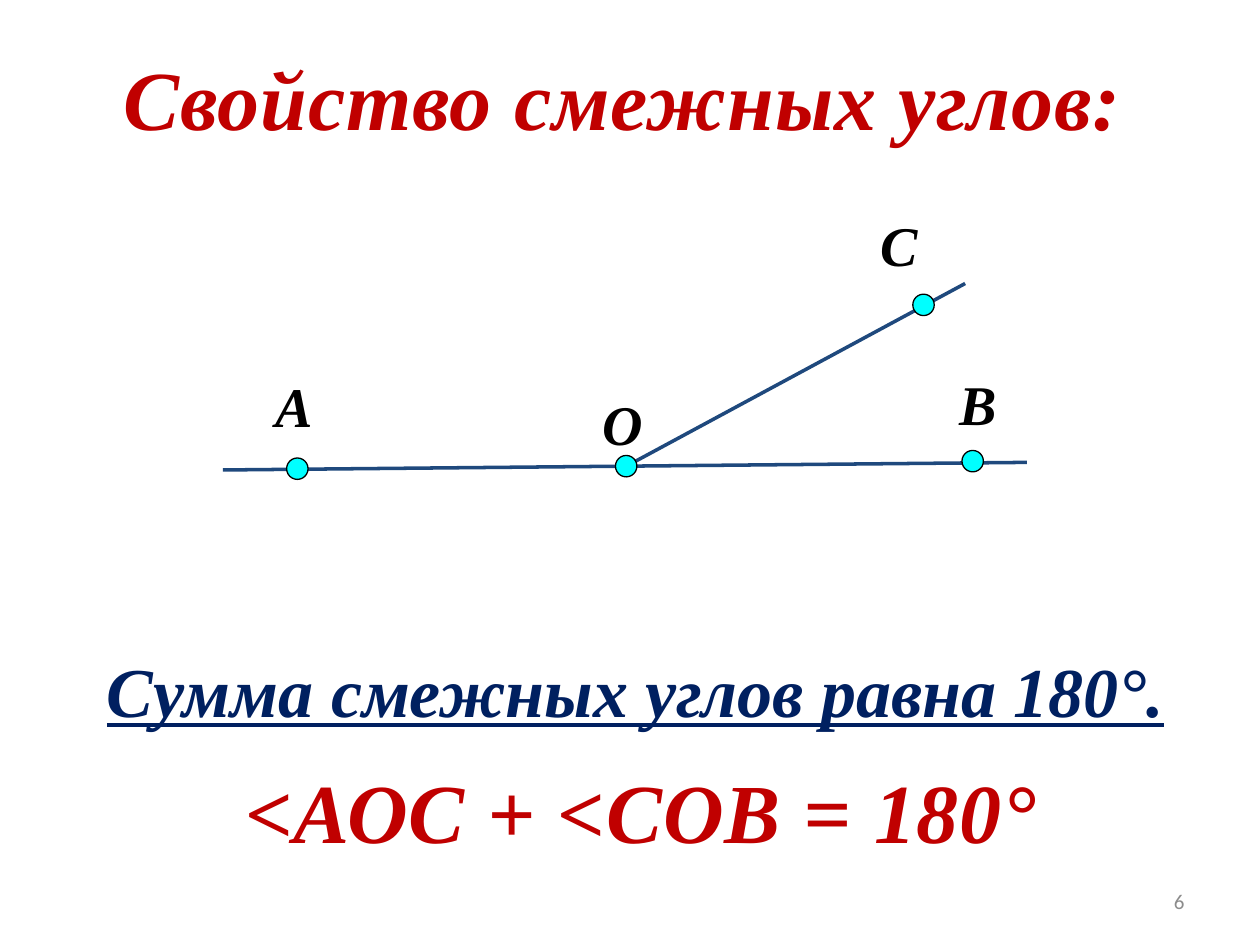
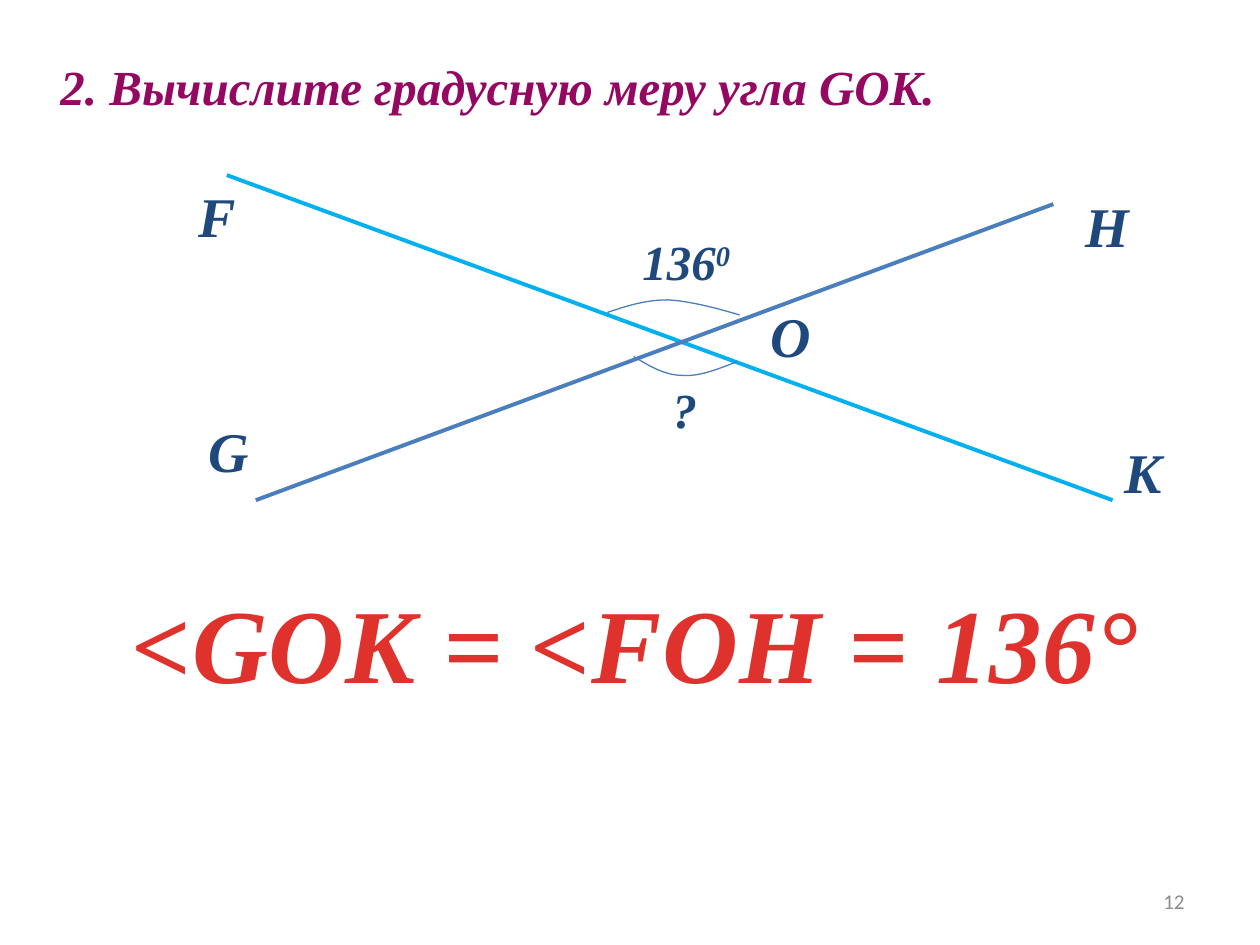
from dataclasses import dataclass

from lxml import etree
from pptx import Presentation
from pptx.dml.color import RGBColor
from pptx.enum.shapes import MSO_CONNECTOR, MSO_SHAPE
from pptx.enum.text import MSO_ANCHOR, MSO_AUTO_SIZE, PP_ALIGN
from pptx.oxml.ns import qn
from pptx.util import Inches, Pt

LINE = MSO_CONNECTOR.STRAIGHT
OVAL = MSO_SHAPE.OVAL
TOP, MIDDLE = MSO_ANCHOR.TOP, MSO_ANCHOR.MIDDLE
FIT, FIXED = MSO_AUTO_SIZE.SHAPE_TO_FIT_TEXT, MSO_AUTO_SIZE.NONE
LEFT, CENTER, RIGHT = PP_ALIGN.LEFT, PP_ALIGN.CENTER, PP_ALIGN.RIGHT
TITLE_ONLY = 5


@dataclass(frozen=True)
class Theme:
    serif: str = "Times New Roman"
    sans: str = "Calibri"
    red: str = "C00000"
    coral: str = "E0322D"
    plum: str = "940862"
    navy: str = "002060"
    blue: str = "1F497D"
    steel: str = "4B7EBC"
    sky: str = "00B0F0"
    cyan: str = "00FFFF"
    black: str = "000000"
    gray: str = "8C8C8C"
    huge: int = 60
    head: int = 48
    rule: int = 40
    letter: int = 32
    task: int = 28
    foot: int = 12


T = Theme()


def color(code):
    return RGBColor.from_string(code)


def write(shape, text, size, tint, align=LEFT, wrap=False, spread=False):
    frame = shape.text_frame
    frame.text = text
    frame.word_wrap = wrap
    frame.auto_size = FIXED if wrap else FIT
    frame.vertical_anchor = TOP
    line = frame.paragraphs[0]
    line.alignment = align
    run = line.runs[0]
    font = run.font
    font.name, font.size = T.serif, Pt(size)
    font.bold = font.italic = True
    font.color.rgb = color(tint)
    if spread:
        run._r.get_or_add_rPr().set("spc", "50")
    return line


def label(shapes, box, text, size, tint, **style):
    field = shapes.add_textbox(*map(Inches, box))
    return write(field, text, size, tint, **style)


def title(slide, box, text, size, tint, **style):
    head = slide.shapes.title
    head.left, head.top, head.width, head.height = map(Inches, box)
    write(head, text, size, tint, **style)


def number(slide, value):
    line = label(slide.shapes, (7.17, 6.95, 2.33, 0.4), value, T.foot, T.gray,
                 align=RIGHT, wrap=True)
    font = line.runs[0].font
    font.name = T.sans
    font.bold = font.italic = False
    slide.shapes[-1].text_frame.vertical_anchor = MIDDLE


def ray(shapes, base, start, end, tint, width):
    ends = [Inches(o + d) for point in (start, end) for o, d in zip(base, point)]
    line = shapes.add_connector(LINE, *ends)
    line.line.color.rgb = color(tint)
    line.line.width = Pt(width)
    etree.SubElement(line._element.spPr, qn("a:effectLst"))


def point(shapes, base, name, center, corner, width):
    x, y = base
    size = 0.17
    group = shapes.add_group_shape().shapes
    dot = group.add_shape(OVAL, Inches(x + center[0] - size / 2),
                          Inches(y + center[1] - size / 2),
                          Inches(size), Inches(size))
    dot.shadow.inherit = False
    dot.fill.solid()
    dot.fill.fore_color.rgb = color(T.cyan)
    dot.line.color.rgb = color(T.black)
    dot.line.width = Pt(0.75)
    label(group, (x + corner[0], y + corner[1], width, 0.64), name, T.letter, T.black)


def bend(knots, steps=12):
    trail = [knots[0]]
    for first in range(0, len(knots) - 1, 3):
        a, b, c, d = knots[first:first + 4]
        for step in range(1, steps + 1):
            t = step / steps
            u = 1 - t
            trail.append(tuple(u**3 * p + 3 * u * u * t * q + 3 * u * t * t * r + t**3 * s
                               for p, q, r, s in zip(a, b, c, d)))
    return trail


def arc(shapes, base, knots):
    trail = [(Inches(base[0] + x), Inches(base[1] + y)) for x, y in bend(knots)]
    path = shapes.build_freeform(*trail[0])
    path.add_line_segments(trail[1:], close=False)
    curve = path.convert_to_shape()
    curve.shadow.inherit = False
    curve.fill.background()
    curve.line.color.rgb = color(T.steel)
    curve.line.width = Pt(0.75)


def pair(shapes, base):
    ray(shapes, base, (3.22, 2.07), (5.89, 0.63), T.blue, 2)
    ray(shapes, base, (0, 2.11), (6.38, 2.05), T.blue, 2)
    for name, center, corner, width in (
        ("O", (3.2, 2.08), (2.91, 1.42), 0.53),
        ("С", (5.56, 0.8), (5.12, 0), 0.5),
        ("А", (0.59, 2.1), (0.32, 1.28), 0.5),
        ("В", (5.95, 2.04), (5.75, 1.26), 0.5),
    ):
        point(shapes, base, name, center, corner, width)


def cross(shapes, base):
    x, y = base
    ray(shapes, base, (0.32, 0), (7.35, 2.58), T.sky, 2.25)
    ray(shapes, base, (0.55, 2.58), (6.88, 0.23), T.steel, 2.25)
    for name, left, top, width in (
        ("G", 0.08, 1.87, 0.53),
        ("F", 0, 0, 0.5),
        ("O", 4.54, 0.95, 0.53),
        ("H", 7.04, 0.08, 0.55),
        ("K", 7.35, 2.03, 0.5),
    ):
        label(shapes, (x + left, y + top, width, 0.64), name, T.letter, T.blue)

    given = label(shapes, (x + 3.52, y + 0.4, 0.92, 0.57), "136", T.task, T.blue)
    power = given.add_run()
    power.text = "0"
    font = power.font
    font.name, font.size = T.serif, Pt(T.task)
    font.bold = font.italic = True
    font.color.rgb = color(T.blue)
    power._r.get_or_add_rPr().set("baseline", "30000")
    label(shapes, (x + 3.76, y + 1.57, 0.4, 0.57), "?", T.task, T.blue)

    arc(shapes, base, [(3.34, 1.09), (3.49, 1.04), (3.64, 0.99), (3.82, 0.99),
                       (3.99, 1), (4.19, 1.05), (4.39, 1.11)])
    arc(shapes, base, [(4.37, 1.48), (4.22, 1.54), (4.07, 1.6), (3.94, 1.59),
                       (3.8, 1.59), (3.68, 1.52), (3.55, 1.44)])


def law(deck):
    slide = deck.slides.add_slide(deck.slide_layouts[TITLE_ONLY])
    shapes = slide.shapes
    title(slide, (0.84, 0.32, 8.21, 0.91), "Свойство смежных углов:",
          T.head, T.red, align=CENTER, spread=True)
    rule = label(shapes, (0.75, 5.09, 8.68, 0.77), "Сумма смежных углов равна 180°.",
                 T.rule, T.navy)
    rule.runs[0].font.underline = True
    label(shapes, (1.81, 5.98, 6.56, 0.91), "<АОС + <СОВ = 180°",
          T.head, T.red, align=CENTER, spread=True)
    pair(shapes, (1.77, 1.62))
    number(slide, "6")


def task(deck):
    slide = deck.slides.add_slide(deck.slide_layouts[TITLE_ONLY])
    title(slide, (0.38, 0.4, 9.62, 1.14), "2. Вычислите градусную меру угла GOK.",
          T.task, T.plum, wrap=True)
    cross(slide.shapes, (1.48, 1.39))
    label(slide.shapes, (0.9, 4.54, 8.29, 1.11), "<GOK = <FOH = 136°",
          T.huge, T.coral, align=CENTER, spread=True)
    number(slide, "12")


def main():
    deck = Presentation()
    deck.slide_width, deck.slide_height = Inches(10), Inches(7.5)
    law(deck)
    task(deck)
    deck.save("out.pptx")


if __name__ == "__main__":
    main()
